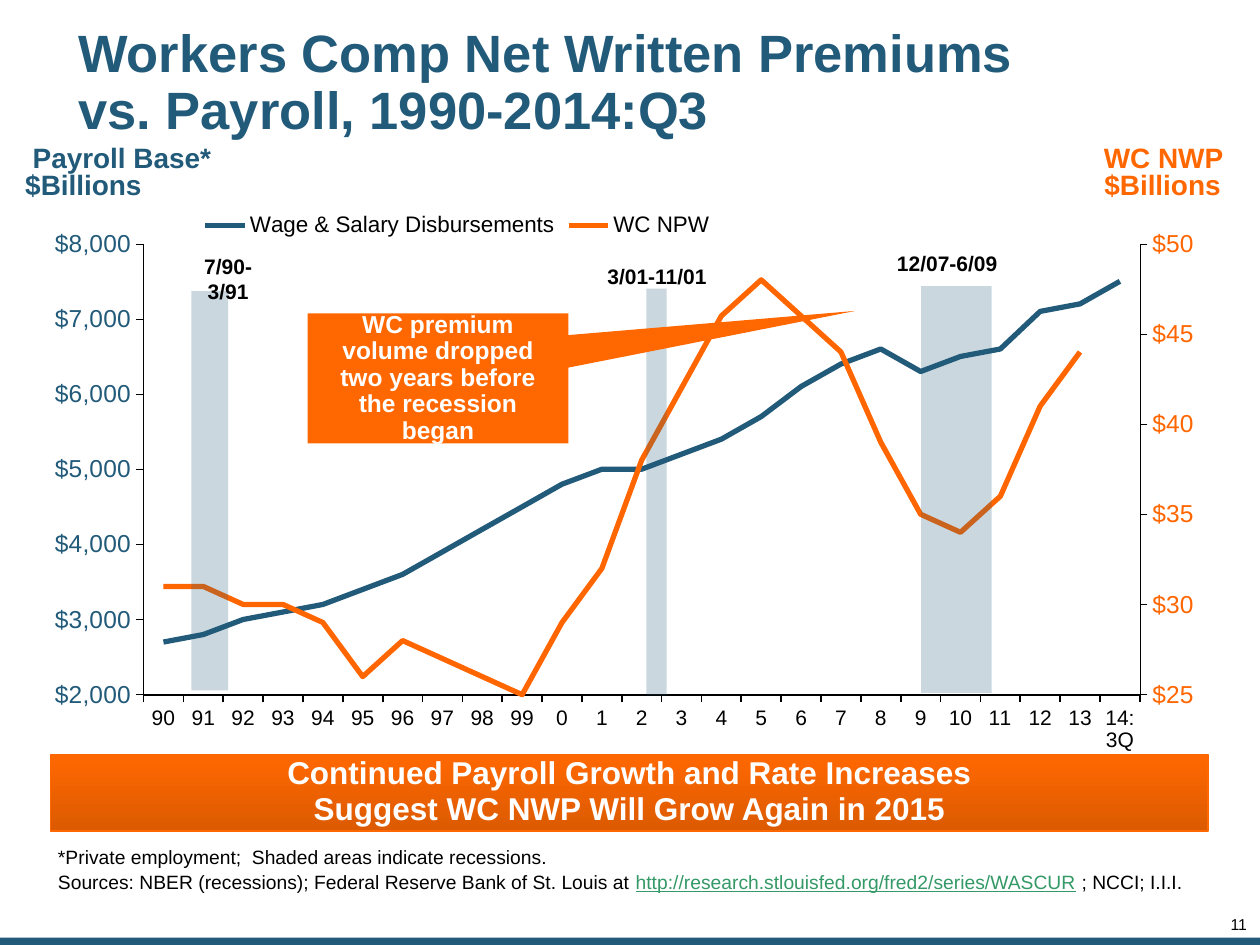
from copy import deepcopy
from lxml.etree import SubElement
from pptx import Presentation
from pptx.chart.axis import ValueAxis
from pptx.chart.data import CategoryChartData
from pptx.dml.color import RGBColor
from pptx.enum.chart import XL_CHART_TYPE, XL_LEGEND_POSITION, XL_TICK_MARK
from pptx.enum.shapes import MSO_SHAPE
from pptx.enum.text import MSO_ANCHOR, MSO_AUTO_SIZE, PP_ALIGN
from pptx.oxml import parse_xml
from pptx.oxml.ns import nsdecls, qn
from pptx.util import Cm, Pt

# Content: boxes are left, top, width, height in cm
BLUE, ORANGE, DARK, BLACK, WHITE = "225A7A", "FF6600", "DC5A01", "000000", "FFFFFF"
FLAME, GREEN = "FF6801", "339966"
TITLE = "Workers Comp Net Written Premiums vs. Payroll, 1990-2014:Q3"
YEARS = [str(y) for y in range(90, 100)] + [str(y) for y in range(14)] + ["14:3Q"]
WAGES = [2700, 2800, 3000, 3100, 3200, 3400, 3600, 3900, 4200, 4500, 4800, 5000, 5000,
         5200, 5400, 5700, 6100, 6400, 6600, 6300, 6500, 6600, 7100, 7200, 7500]
PREMIUMS = [31, 31, 30, 30, 29, 26, 28, 27, 26, 25, 29, 32, 38,
            42, 46, 48, 46, 44, 39, 35, 34, 36, 41, 44, None]
SERIES = [("Wage & Salary Disbursements", WAGES, BLUE), ("WC NPW", PREMIUMS, ORANGE)]
HEADS = [("Payroll Base*", "WC NWP", (0.66, 2.92, 24.43, 0.61), 24.0),
         ("$Billions", "$Billions", (0.51, 3.45, 24.43, 0.61), 24.1)]
# Recession: label, label box, wrap, shaded band
SLUMPS = [("7/90-3/91", (3.71, 5.36, 1.78, 0.51), True, (3.86, 5.87, 0.74, 8.05)),
          ("3/01-11/01", (12.24, 5.31, 2.01, 0.51), False, (13.03, 5.82, 0.41, 8.2)),
          ("12/07-6/09", (18.08, 5.05, 2.03, 0.51), False, (18.57, 5.77, 1.42, 8.2))]
NOTES = [[("*Private employment;  Shaded areas indicate recessions.", BLACK)],
         [("Sources: NBER (recessions); Federal Reserve Bank of St. Louis at ", BLACK),
          ("http://research.stlouisfed.org/fred2/series/WASCUR", GREEN),
          (" ; NCCI; I.I.I.", BLACK)]]
BANNER = "Continued Payroll Growth and Rate Increases\vSuggest WC NWP Will Grow Again in 2015"
CALLOUT = "WC premium volume dropped two years before the recession began"


def rgb(code):
    return RGBColor.from_string(code)


def style(font, size, color, bold=False):
    font.name, font.size, font.bold = "Arial", Pt(size), bold
    font.color.rgb = rgb(color)


def place(box):
    return [Cm(n) for n in box]


def write(shape, text, size=12, color=BLACK, bold=True, align=PP_ALIGN.LEFT, space=1.0,
          gap=0, anchor=MSO_ANCHOR.TOP, inset=(0, 0, 0, 0), wrap=True, tab=None):
    """Fill a shape with a string, or with paragraphs given as (text, colour) lists."""
    frame = shape.text_frame
    frame.word_wrap, frame.auto_size = wrap, MSO_AUTO_SIZE.NONE
    frame.vertical_anchor = anchor
    (frame.margin_left, frame.margin_top,
     frame.margin_right, frame.margin_bottom) = place(inset)
    paras = [[(text, color)]] if isinstance(text, str) else text
    for i, runs in enumerate(paras):
        para = frame.add_paragraph() if i else frame.paragraphs[0]
        para.alignment, para.line_spacing = align, space
        para.space_before = Pt(gap if i else 0)
        if tab:
            stops = SubElement(para._p.get_or_add_pPr(), qn("a:tabLst"))
            SubElement(stops, qn("a:tab"), pos=str(Cm(tab)), algn="r")
        for words, tint in runs:
            for j, line in enumerate(words.split("\v")):
                if j:
                    para.add_line_break()
                run = para.add_run()
                run.text = line
                style(run.font, size, tint, bold)
                if tint == GREEN:
                    run.font.underline = True
    return shape


def label(slide, box, text, **form):
    return write(slide.shapes.add_textbox(*place(box)), text, **form)


def block(slide, box, color, kind=MSO_SHAPE.RECTANGLE):
    shape = slide.shapes.add_shape(kind, *place(box))
    shape.shadow.inherit = False
    shape.fill.solid()
    shape.fill.fore_color.rgb = rgb(color)
    shape.line.fill.background()
    return shape


def layout(parent, index, x, y, w, h, inner=""):
    for old in parent.findall(qn("c:layout")):
        parent.remove(old)
    parent.insert(index, parse_xml(
        f'<c:layout {nsdecls("c")}><c:manualLayout>{inner}'
        f'<c:xMode val="edge"/><c:yMode val="edge"/><c:x val="{x}"/><c:y val="{y}"/>'
        f'<c:w val="{w}"/><c:h val="{h}"/></c:manualLayout></c:layout>'))


def trim(axis, size, color, width):
    axis.has_major_gridlines = False
    axis.major_tick_mark, axis.minor_tick_mark = XL_TICK_MARK.OUTSIDE, XL_TICK_MARK.NONE
    axis.format.line.color.rgb = rgb(BLACK)
    axis.format.line.width = Pt(width)
    style(axis.tick_labels.font, size, color)


def scale(axis, low, high, step, color):
    trim(axis, 14, color, 0.25)
    axis.minimum_scale, axis.maximum_scale, axis.major_unit = low, high, step
    axis.tick_labels.number_format = "\\$#,##0"
    axis.tick_labels.number_format_is_linked = False


def split(plot):
    """Move the second series to its own axes and return the right axis."""
    first = plot.find(qn("c:lineChart"))
    second = deepcopy(first)
    first.remove(first.findall(qn("c:ser"))[1])
    second.remove(second.findall(qn("c:ser"))[0])
    first.addnext(second)
    left, base = plot.find(qn("c:valAx")), plot.find(qn("c:catAx"))
    right, hidden = deepcopy(left), deepcopy(base)
    left.addnext(right)
    right.addnext(hidden)
    for node, own, other in ((hidden, "501", "502"), (right, "502", "501")):
        node.find(qn("c:axId")).set("val", own)
        node.find(qn("c:crossAx")).set("val", other)
    for node, own in zip(second.findall(qn("c:axId")), ("501", "502")):
        node.set("val", own)
    right.find(qn("c:axPos")).set("val", "r")
    right.find(qn("c:crosses")).set("val", "max")
    hidden.find(qn("c:delete")).set("val", "1")
    return ValueAxis(right)


def graph(slide):
    data = CategoryChartData()
    data.categories = YEARS
    for name, vals, _ in SERIES:
        data.add_series(name, vals)
    chart = slide.shapes.add_chart(
        XL_CHART_TYPE.LINE, *place((0.66, 3.86, 23.77, 11.35)), data).chart
    style(chart.font, 14, BLACK)
    chart.has_title = False
    for item, (_, _, color) in zip(chart.plots[0].series, SERIES):
        item.smooth = False
        item.format.line.color.rgb = rgb(color)
        item.format.line.width = Pt(3)
    chart.plots[0].vary_by_categories = False
    trim(chart.category_axis, 12, BLACK, 1)
    scale(chart.value_axis, 2000, 8000, 1000, BLUE)
    plot = chart.element.find(qn("c:chart")).find(qn("c:plotArea"))
    scale(split(plot), 25, 50, 5, ORANGE)
    layout(plot, 0, 0.094, 0.093, 0.845, 0.801, '<c:layoutTarget val="inner"/>')
    # Legend in one row above the plot
    chart.has_legend = True
    key = chart.legend
    key.position, key.include_in_layout = XL_LEGEND_POSITION.RIGHT, False
    style(key.font, 12.8, BLACK)
    layout(key._element, 1, 0.14, 0.03, 0.44, 0.06)


def main():
    deck = Presentation()
    deck.slide_width, deck.slide_height = Cm(25.4), Cm(19.05)
    slide = deck.slides.add_slide(deck.slide_layouts[5])
    mid = dict(align=PP_ALIGN.CENTER, anchor=MSO_ANCHOR.MIDDLE)

    # Frame: title, bottom bar, page number
    title = slide.shapes.title
    title.left, title.top, title.width, title.height = place((1.45, 0.41, 19.61, 2.57))
    write(title, TITLE, size=30, color=BLUE, space=0.9, anchor=MSO_ANCHOR.MIDDLE,
          inset=[0.13] * 4)
    block(slide, (0, 18.9, 25.4, 0.15), BLUE)
    label(slide, (23.9, 18.49, 1.24, 0.33), "11", size=9, bold=False,
          align=PP_ALIGN.RIGHT, space=0.85)

    # Chart with its axis headings
    graph(slide)
    for left, right, box, tab in HEADS:
        label(slide, box, [[(left + "\t", BLUE), (right, FLAME)]], size=16, space=0.9, tab=tab)

    # Footnotes and banner
    label(slide, (0.15, 17.09, 24.36, 1.3), NOTES, size=11, bold=False, space=0.85,
          gap=2.75, anchor=MSO_ANCHOR.BOTTOM, inset=(1.02, 0, 0, 0.38))
    banner = block(slide, (1.02, 15.21, 23.34, 1.55), FLAME)
    banner.fill.gradient()
    banner.fill.gradient_angle = 270
    for stop, spot, color in zip(banner.fill.gradient_stops, (0, 1), (FLAME, DARK)):
        stop.position, stop.color.rgb = spot, rgb(color)
    banner.line.color.rgb = rgb(FLAME)
    banner.line.width = Pt(1)
    write(banner, BANNER, size=18, color=WHITE, space=0.95,
          inset=(0.25, 0.13, 0.25, 0.18), **mid)

    # Recession bands and dates
    for text, box, wrap, area in SLUMPS:
        band = block(slide, area, BLUE)
        tint = band.fill._xPr.find(qn("a:solidFill"))[0]
        SubElement(tint, qn("a:alpha"), val="24000")
        label(slide, box, text, wrap=wrap, **mid)

    # Callout
    call = block(slide, (6.2, 6.32, 5.26, 2.62), FLAME, MSO_SHAPE.RECTANGULAR_CALLOUT)
    call.adjustments[0], call.adjustments[1] = 1.6, -0.52
    write(call, CALLOUT, size=14, color=WHITE, space=0.9, inset=[0.25] * 4, **mid)
    deck.save("out.pptx")


if __name__ == "__main__":
    main()
